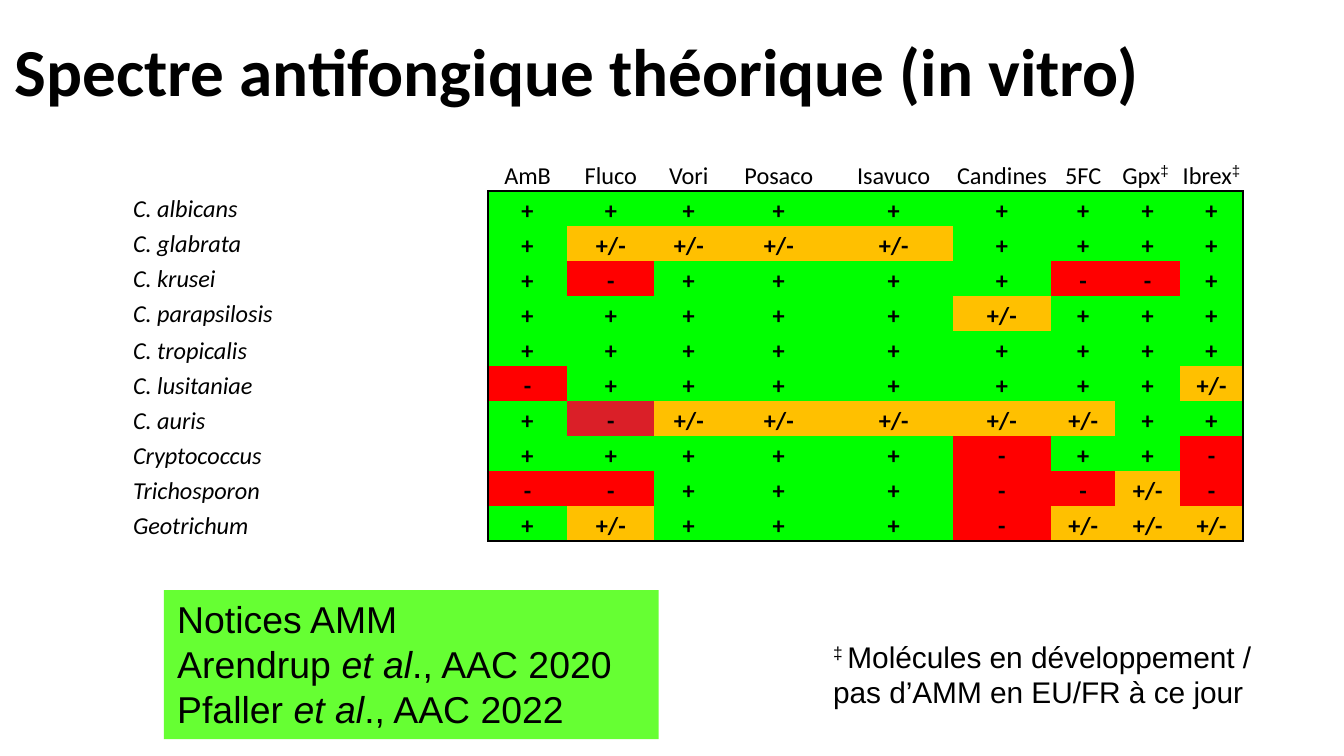
from lxml import etree
from pptx import Presentation
from pptx.dml.color import RGBColor
from pptx.enum.text import MSO_ANCHOR, PP_ALIGN
from pptx.oxml.ns import qn
from pptx.util import Inches, Pt

BLACK = RGBColor(0x00, 0x00, 0x00)
GREEN = RGBColor(0x00, 0xFF, 0x00)
AMBER = RGBColor(0xFF, 0xC0, 0x00)
RED = RGBColor(0xFF, 0x00, 0x00)
DARK_RED = RGBColor(0xDA, 0x1F, 0x28)
LIME = RGBColor(0x66, 0xFF, 0x33)
ACTIVITY_COLORS = {"+": GREEN, "+/-": AMBER, "-": RED}
PLAIN_STYLE = "{2D5ABB26-0587-4C30-8999-92F81FD0307C}"

TITLE = "Spectre antifongique théorique (in vitro)"
DAGGER = "‡ "
DRUGS = ["AmB", "Fluco", "Vori", "Posaco", "Isavuco", "Candines", "5FC", "Gpx", "Ibrex"]
IN_DEVELOPMENT = {"Gpx", "Ibrex"}
SPECTRUM = [
    ("C. albicans", "+ + + + + + + + +"),
    ("C. glabrata", "+ +/- +/- +/- +/- + + + +"),
    ("C. krusei", "+ - + + + + - - +"),
    ("C. parapsilosis", "+ + + + + +/- + + +"),
    ("C. tropicalis", "+ + + + + + + + +"),
    ("C. lusitaniae", "- + + + + + + + +/-"),
    ("C. auris", "+ - +/- +/- +/- +/- +/- + +"),
    ("Cryptococcus", "+ + + + + - + + -"),
    ("Trichosporon", "- - + + + - - +/- -"),
    ("Geotrichum", "+ +/- + + + - +/- +/- +/-"),
]
DARK_CELLS = {("C. auris", "Fluco")}
MIDDLE_ANCHORED = 4  # the first species names sit mid-row, the rest at the bottom
COLUMN_WIDTHS = [2.65, 0.59, 0.65, 0.51, 0.83, 0.88, 0.73, 0.48, 0.48, 0.47]
TABLE_HEIGHT = 2.87
SOURCES = [
    [("Notices AMM", False)],
    [("Arendrup ", False), ("et al", True), ("., AAC 2020", False)],
    [("Pfaller ", False), ("et al", True), ("., AAC 2022", False)],
]
FOOTNOTE = "Molécules en développement / pas d’AMM en EU/FR à ce jour"


def set_font(font, name, size, bold=False, italic=False):
    font.name, font.size = name, Pt(size)
    font.bold, font.italic = bold, italic
    font.color.rgb = BLACK


def add_dagger(paragraph):
    dagger = paragraph.add_run()
    dagger.text = DAGGER
    dagger._r.get_or_add_rPr().set("baseline", "30000")
    return dagger


def add_text_box(slide, left, top, width, height):
    box = slide.shapes.add_textbox(Inches(left), Inches(top), Inches(width), Inches(height))
    box.text_frame.word_wrap = True
    return box


def write_cell(cell, words, anchor=MSO_ANCHOR.BOTTOM, align=PP_ALIGN.CENTER, **style):
    cell.margin_left = cell.margin_right = cell.margin_top = Inches(0.01)
    cell.margin_bottom = 0
    cell.vertical_anchor = anchor
    paragraph = cell.text_frame.paragraphs[0]
    paragraph.alignment = align
    set_font(paragraph.font, "Calibri", 13, **style)
    if words:
        paragraph.add_run().text = words
    return paragraph


def set_borders(cell, sides):
    """Draw 1 pt black lines on the sides named by letters and clear the others."""
    properties = cell._tc.get_or_add_tcPr()
    for position, side in enumerate("LRTB"):
        line = etree.Element(qn(f"a:ln{side}"), w=str(Pt(1)))
        if side in sides:
            fill = etree.SubElement(line, qn("a:solidFill"))
            etree.SubElement(fill, qn("a:srgbClr"), val=str(BLACK))
        else:
            etree.SubElement(line, qn("a:noFill"))
        properties.insert(position, line)


def add_spectrum_table(slide):
    row_count = len(SPECTRUM) + 1
    frame = slide.shapes.add_table(
        row_count, len(COLUMN_WIDTHS), Inches(0.98), Inches(1.16),
        Inches(sum(COLUMN_WIDTHS)), Inches(TABLE_HEIGHT))
    table = frame.table
    table.first_row = table.horz_banding = False
    table._tbl.tblPr.find(qn("a:tableStyleId")).text = PLAIN_STYLE
    for column, width in zip(table.columns, COLUMN_WIDTHS):
        column.width = Inches(width)
    for row in table.rows:
        row.height = Inches(TABLE_HEIGHT / row_count)

    corner = write_cell(table.cell(0, 0), "")
    etree.SubElement(corner._p, qn("a:endParaRPr"), sz="1300")
    set_borders(table.cell(0, 0), "")
    for c, drug in enumerate(DRUGS, 1):
        heading = write_cell(table.cell(0, c), drug)
        if drug in IN_DEVELOPMENT:
            set_font(add_dagger(heading).font, "Arial", 14)
        set_borders(table.cell(0, c), "B")

    for r, (species, activities) in enumerate(SPECTRUM, 1):
        anchor = MSO_ANCHOR.MIDDLE if r <= MIDDLE_ANCHORED else MSO_ANCHOR.BOTTOM
        write_cell(table.cell(r, 0), species, anchor, PP_ALIGN.LEFT, italic=True)
        set_borders(table.cell(r, 0), "R")
        for c, (drug, activity) in enumerate(zip(DRUGS, activities.split()), 1):
            cell = table.cell(r, c)
            write_cell(cell, activity, bold=True)
            cell.fill.solid()
            dark = (species, drug) in DARK_CELLS
            cell.fill.fore_color.rgb = DARK_RED if dark else ACTIVITY_COLORS[activity]
            edges = {"L": c == 1, "R": c == len(DRUGS), "T": r == 1, "B": r == len(SPECTRUM)}
            set_borders(cell, [side for side, outer in edges.items() if outer])


def main():
    prs = Presentation()
    prs.slide_width, prs.slide_height = Inches(10), Inches(10 * 9 / 16)
    slide = prs.slides.add_slide(prs.slide_layouts[6])

    title = add_text_box(slide, 0.01, 0, 9.99, 1.04).text_frame
    title.vertical_anchor = MSO_ANCHOR.MIDDLE
    title.text = TITLE
    set_font(title.paragraphs[0].font, "Calibri", 36, bold=True)

    add_spectrum_table(slide)

    sources = add_text_box(slide, 1.22, 4.39, 3.68, 1.11)
    sources.fill.solid()
    sources.fill.fore_color.rgb = LIME
    for i, parts in enumerate(SOURCES):
        frame = sources.text_frame
        paragraph = frame.add_paragraph() if i else frame.paragraphs[0]
        set_font(paragraph.font, "Arial", 20)
        for words, italic in parts:
            run = paragraph.add_run()
            run.text = words
            run.font.italic = italic

    footnote = add_text_box(slide, 6.1, 4.7, 3.53, 0.64).text_frame.paragraphs[0]
    set_font(footnote.font, "Arial", 16)
    add_dagger(footnote)
    footnote.add_run().text = FOOTNOTE

    prs.save("out.pptx")


if __name__ == "__main__":
    main()
